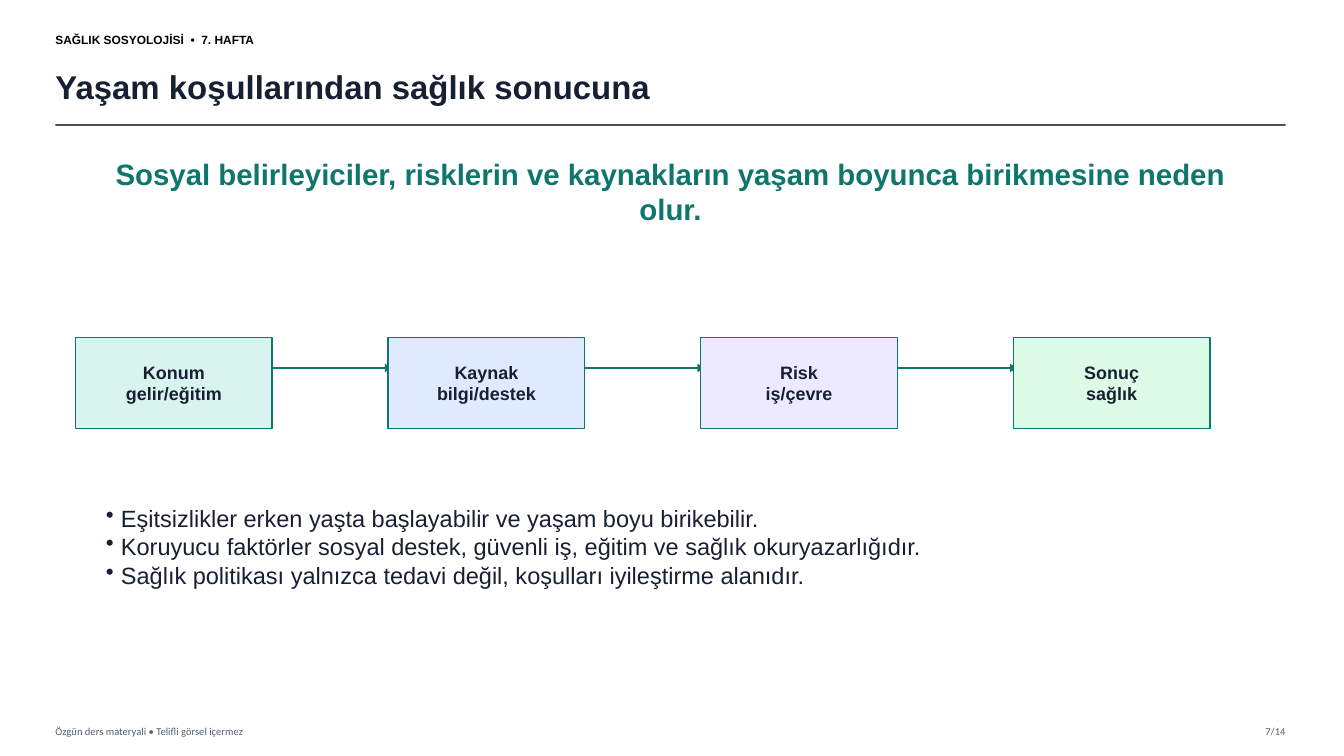
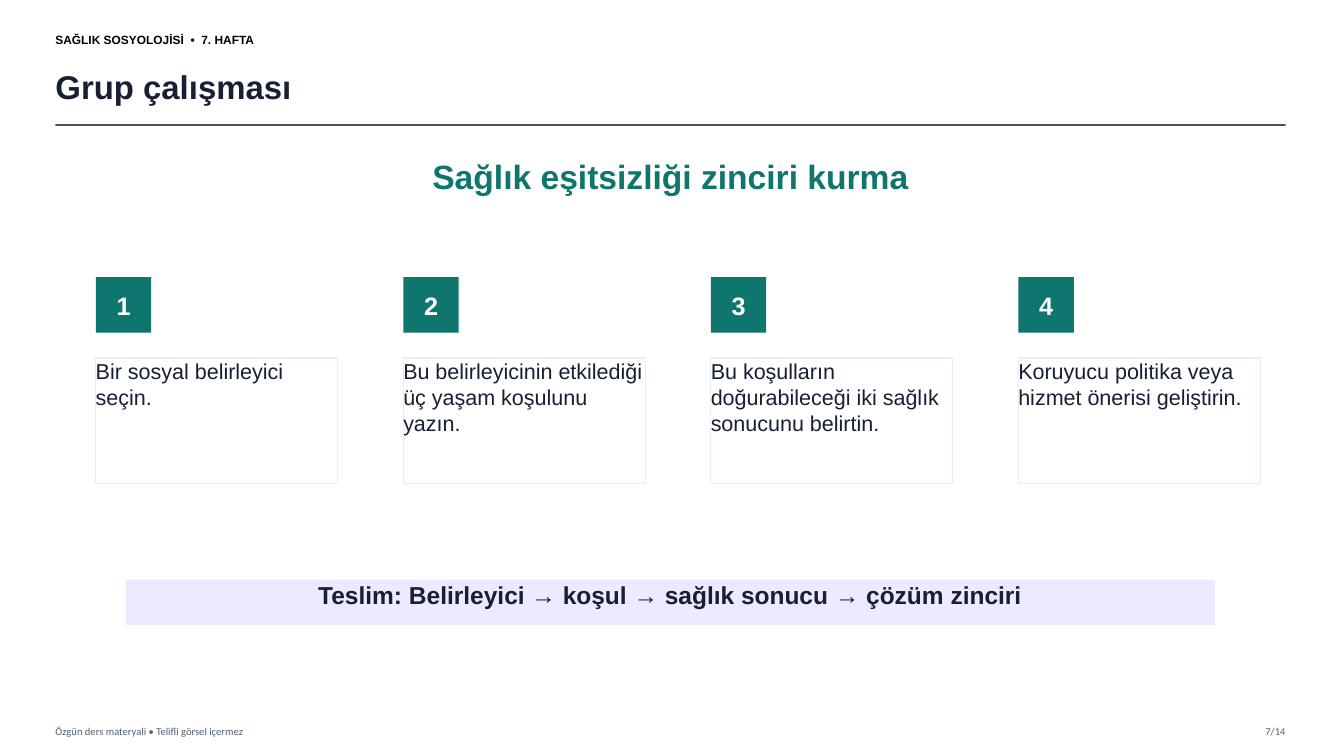
"""Build two health sociology slides: a pathway diagram and a group task."""
from lxml import etree
from pptx import Presentation
from pptx.dml.color import RGBColor
from pptx.enum.shapes import MSO_CONNECTOR, MSO_SHAPE
from pptx.enum.text import MSO_ANCHOR, MSO_AUTO_SIZE, PP_ALIGN
from pptx.oxml.ns import qn
from pptx.util import Emu, Pt

RECT = MSO_SHAPE.RECTANGLE
STRAIGHT = MSO_CONNECTOR.STRAIGHT
TOP, MIDDLE = MSO_ANCHOR.TOP, MSO_ANCHOR.MIDDLE
LEFT, CENTER, RIGHT = PP_ALIGN.LEFT, PP_ALIGN.CENTER, PP_ALIGN.RIGHT

PX = 9144
WIDTH, HEIGHT = 1333, 750
MARGIN, RIGHT_EDGE = 55, 1275

BLACK = RGBColor(0x00, 0x00, 0x00)
WHITE = RGBColor(0xFF, 0xFF, 0xFF)
INK = RGBColor(0x17, 0x20, 0x33)
TEAL = RGBColor(0x0F, 0x76, 0x6E)
RULE = RGBColor(0x33, 0x33, 0x33)
MUTED = RGBColor(0x50, 0x60, 0x70)
BORDER = RGBColor(0xE8, 0xEE, 0xF5)
MINT = RGBColor(0xD9, 0xF3, 0xEE)
BLUE = RGBColor(0xDF, 0xEA, 0xFE)
LILAC = RGBColor(0xED, 0xE9, 0xFE)
GREEN = RGBColor(0xDC, 0xFC, 0xE7)

COURSE = "SAĞLIK SOSYOLOJİSİ  •  7. HAFTA"
FOOTER = "Özgün ders materyali • Telifli görsel içermez"
PAGE = "7/14"

PATHWAY_TITLE = "Yaşam koşullarından sağlık sonucuna"
PATHWAY_CLAIM = ("Sosyal belirleyiciler, risklerin ve kaynakların yaşam boyunca "
                 "birikmesine neden olur.")
STAGES = [
    (["Konum", "gelir/eğitim"], MINT),
    (["Kaynak", "bilgi/destek"], BLUE),
    (["Risk", "iş/çevre"], LILAC),
    (["Sonuç", "sağlık"], GREEN),
]
POINTS = [
    "Eşitsizlikler erken yaşta başlayabilir ve yaşam boyu birikebilir.",
    "Koruyucu faktörler sosyal destek, güvenli iş, eğitim ve sağlık okuryazarlığıdır.",
    "Sağlık politikası yalnızca tedavi değil, koşulları iyileştirme alanıdır.",
]

TASK_TITLE = "Grup çalışması"
TASK_NAME = "Sağlık eşitsizliği zinciri kurma"
STEPS = [
    "Bir sosyal belirleyici seçin.",
    "Bu belirleyicinin etkilediği üç yaşam koşulunu yazın.",
    "Bu koşulların doğurabileceği iki sağlık sonucunu belirtin.",
    "Koruyucu politika veya hizmet önerisi geliştirin.",
]
DELIVERY = "Teslim: Belirleyici → koşul → sağlık sonucu → çözüm zinciri"


def px(*lengths):
    return [Emu(n * PX) for n in lengths]


def set_text(sp, lines, size, color=INK, bold=False, align=LEFT, anchor=TOP,
             font="Arial", bullet_indent=0):
    tf = sp.text_frame
    tf.word_wrap = True
    tf.auto_size = MSO_AUTO_SIZE.NONE
    tf.vertical_anchor = anchor
    tf.margin_left = tf.margin_top = tf.margin_right = tf.margin_bottom = 0
    tf.text = "\n".join(lines)
    for p in tf.paragraphs:
        p.alignment = align
        if bullet_indent:
            pPr = p._p.get_or_add_pPr()
            pPr.set("marL", str(bullet_indent * PX))
            pPr.set("indent", str(-bullet_indent * PX))
            etree.SubElement(pPr, qn("a:buChar"), char="•")
        for r in p.runs:
            r.font.size = Pt(size)
            r.font.name = font
            r.font.bold = bold
            r.font.color.rgb = color


def add_text(slide, box, lines, size, **style):
    set_text(slide.shapes.add_textbox(*px(*box)), lines, size, **style)


def add_box(slide, box, fill, lines, size, border=None, **style):
    sp = slide.shapes.add_shape(RECT, *px(*box))
    sp.shadow.inherit = False
    sp.fill.solid()
    sp.fill.fore_color.rgb = fill
    if border is None:
        sp.line.fill.background()
    else:
        sp.line.color.rgb = border
        sp.line.width = Pt(1)
    set_text(sp, lines, size, **style)


def add_line(slide, x1, x2, y, color, width, opacity=100, arrow=False):
    line = slide.shapes.add_connector(STRAIGHT, *px(x1, y, x2, y))
    line.line.color.rgb = color
    line.line.width = Pt(width)
    spPr = line._element.spPr
    if opacity < 100:
        rgb = spPr.find(".//" + qn("a:srgbClr"))
        etree.SubElement(rgb, qn("a:alpha"), val=str(opacity * 1000))
    if arrow:
        etree.SubElement(spPr.find(qn("a:ln")), qn("a:tailEnd"), type="triangle")
    etree.SubElement(spPr, qn("a:effectLst"))


def add_slide(prs, title):
    slide = prs.slides.add_slide(prs.slide_layouts[5])
    sp = slide.shapes.title
    sp.left, sp.top, sp.width, sp.height = px(MARGIN, 58, 1195, 55)
    set_text(sp, [title], 23.5, bold=True, anchor=MIDDLE)
    add_text(slide, (MARGIN, 25, 360, 28), [COURSE], 8.5, color=BLACK,
             bold=True, anchor=MIDDLE)
    add_line(slide, MARGIN, RIGHT_EDGE, 124, RULE, 1.2, opacity=85)
    small = dict(size=7.5, color=MUTED, font="Calibri", anchor=MIDDLE)
    add_text(slide, (MARGIN, 714, 600, 22), [FOOTER], **small)
    add_text(slide, (RIGHT_EDGE - 65, 714, 65, 22), [PAGE], align=RIGHT, **small)
    return slide


def build_pathway(prs):
    slide = add_slide(prs, PATHWAY_TITLE)
    left, pitch, width, overlap = 75, 310, 195, 5
    lefts = [left + i * pitch for i in range(len(STAGES))]
    for x, following in zip(lefts, lefts[1:]):
        add_line(slide, x + width - 3 * overlap, following + overlap, 365,
                 TEAL, 2, arrow=True)
    for x, (lines, fill) in zip(lefts, STAGES):
        add_box(slide, (x, 335, width, 90), fill, lines, 12.8, border=TEAL,
                bold=True, align=CENTER, anchor=MIDDLE)
    add_text(slide, (80, 155, 1170, 105), [PATHWAY_CLAIM], 21, color=TEAL,
             bold=True, align=CENTER)
    add_text(slide, (105, 500, 1100, 125), POINTS, 16.8, bullet_indent=15)


def build_task(prs):
    slide = add_slide(prs, TASK_TITLE)
    add_text(slide, (75, 155, 1180, 65), [TASK_NAME], 24, color=TEAL,
             bold=True, align=CENTER)
    left, pitch = 95, 305
    for i, step in enumerate(STEPS):
        x = left + i * pitch
        add_box(slide, (x, 275, 55, 55), TEAL, [str(i + 1)], 18, color=WHITE,
                bold=True, align=CENTER, anchor=MIDDLE)
        add_box(slide, (x, 355, 240, 125), WHITE, [step], 15.4, border=BORDER)
    add_box(slide, (125, 575, 1080, 45), LILAC, [DELIVERY], 17.5, bold=True,
            align=CENTER)


def main():
    prs = Presentation()
    prs.slide_width, prs.slide_height = px(WIDTH, HEIGHT)
    build_pathway(prs)
    build_task(prs)
    prs.save("out.pptx")


if __name__ == "__main__":
    main()
